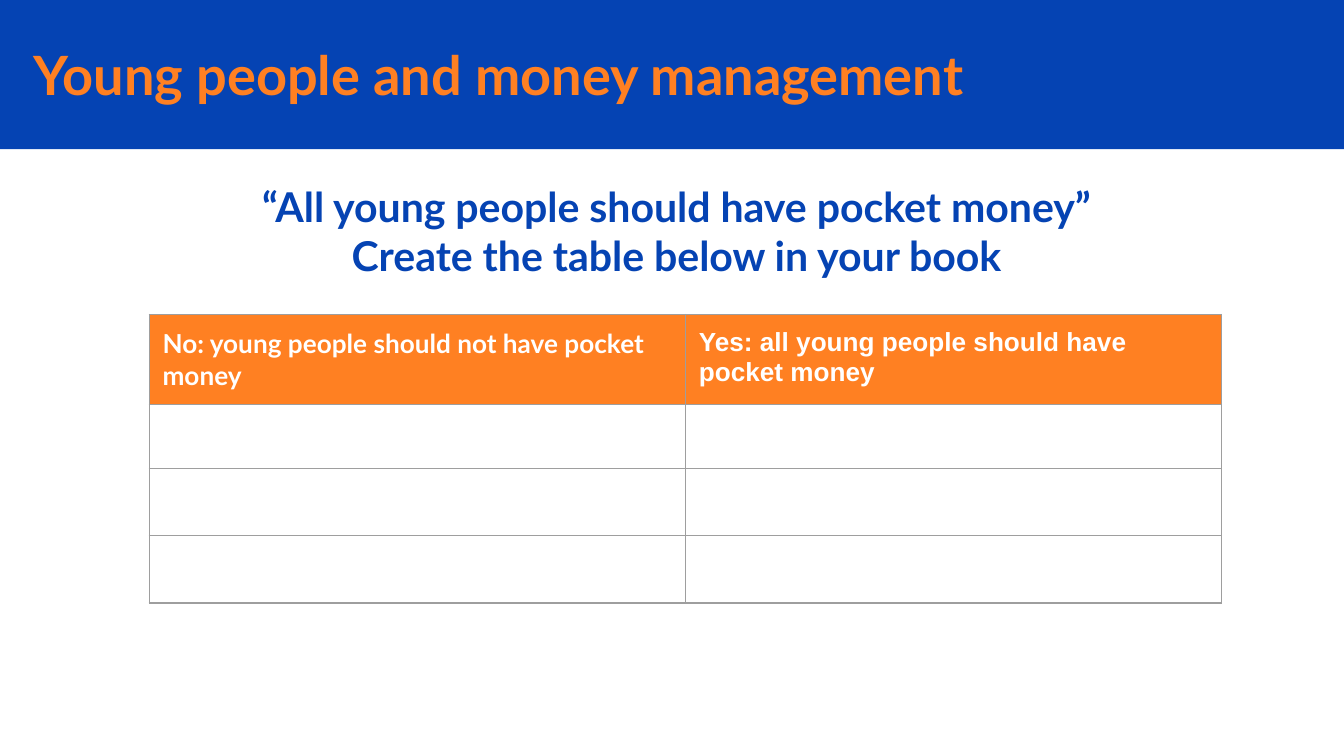
from dataclasses import dataclass

from lxml.etree import SubElement
from pptx import Presentation
from pptx.dml.color import RGBColor
from pptx.enum.shapes import MSO_SHAPE
from pptx.enum.text import MSO_ANCHOR, MSO_AUTO_SIZE, PP_ALIGN
from pptx.oxml.ns import qn
from pptx.util import Inches, Pt


@dataclass(frozen=True)
class Theme:
    blue: str = "0543B3"
    orange: str = "FF8022"
    white: str = "FFFFFF"
    grid: str = "9E9E9E"
    font: str = "Lato"
    alternate_font: str = "Arial"
    title_size: int = 29
    statement_size: int = 22
    header_size: int = 14
    grid_width: float = 0.75


THEME = Theme()
TITLE = "Young people and money management"
STATEMENT = [
    "“All young people should have pocket money”",
    "Create the table below in your book",
]
HEADERS = [
    ("No: young people should not have pocket money", THEME.font),
    ("Yes: all young people should have pocket money", THEME.alternate_font),
]
COLUMN_WIDTH = 3.99
ROW_HEIGHTS = [0.55, 0.48, 0.5, 0.5]


def style_paragraph(para, size, color, font=THEME.font, align=PP_ALIGN.LEFT):
    para.alignment = align
    para.font.name = font
    para.font.size = Pt(size)
    para.font.bold = True
    para.font.color.rgb = RGBColor.from_string(color)


def set_margins(target, side, vertical):
    target.margin_left = target.margin_right = Inches(side)
    target.margin_top = target.margin_bottom = Inches(vertical)


def add_band(page, width):
    band = page.shapes.add_shape(MSO_SHAPE.RECTANGLE, 0, 0, width, Inches(1.11))
    band.shadow.inherit = False
    band.fill.solid()
    band.fill.fore_color.rgb = RGBColor.from_string(THEME.blue)
    band.line.fill.background()
    # Send the band behind the title
    tree = band._element.getparent()
    tree.insert(2, band._element)


def fill_title(page):
    title = page.shapes.title
    title.left, title.top = Inches(0.15), Inches(0.27)
    title.width, title.height = Inches(8.85), Inches(0.56)
    frame = title.text_frame
    frame.text = TITLE
    frame.auto_size = MSO_AUTO_SIZE.NONE
    frame.vertical_anchor = MSO_ANCHOR.MIDDLE
    set_margins(frame, 0.1, 0.1)
    style_paragraph(frame.paragraphs[0], THEME.title_size, THEME.orange)


def add_statement(page):
    box = page.shapes.add_textbox(Inches(0.41), Inches(1.25), Inches(9.25), Inches(0.94))
    frame = box.text_frame
    frame.word_wrap = True
    set_margins(frame, 0.1, 0.1)
    frame.text = "\n".join(STATEMENT)
    for para in frame.paragraphs:
        style_paragraph(para, THEME.statement_size, THEME.blue, align=PP_ALIGN.CENTER)


def add_borders(cell):
    properties = cell._tc.get_or_add_tcPr()
    for position, side in enumerate(("lnL", "lnR", "lnT", "lnB")):
        line = SubElement(properties, qn(f"a:{side}"), w=str(Pt(THEME.grid_width)))
        fill = SubElement(line, qn("a:solidFill"))
        SubElement(fill, qn("a:srgbClr"), val=THEME.grid)
        # Borders come before the cell fill
        properties.insert(position, line)


def add_answer_table(page):
    columns = len(HEADERS)
    frame = page.shapes.add_table(
        len(ROW_HEIGHTS), columns, Inches(1.11), Inches(2.34),
        Inches(COLUMN_WIDTH * columns), Inches(sum(ROW_HEIGHTS)),
    )
    table = frame.table
    table.first_row = table.horz_banding = False
    for column in table.columns:
        column.width = Inches(COLUMN_WIDTH)
    for row, height in zip(table.rows, ROW_HEIGHTS):
        row.height = Inches(height)
    for cell in table.iter_cells():
        set_margins(cell, 0.1, 0.05)
        cell.fill.background()
        add_borders(cell)

    # Header row
    for cell, (text, font) in zip(table.rows[0].cells, HEADERS):
        set_margins(cell, 0.1, 0.1)
        cell.fill.solid()
        cell.fill.fore_color.rgb = RGBColor.from_string(THEME.orange)
        cell.text = text
        para = cell.text_frame.paragraphs[0]
        style_paragraph(para, THEME.header_size, THEME.white, font)


def main():
    deck = Presentation()
    # Widescreen, 16:9
    deck.slide_width = Inches(10)
    deck.slide_height = deck.slide_width * 9 // 16
    page = deck.slides.add_slide(deck.slide_layouts.get_by_name("Title Only"))
    add_band(page, deck.slide_width)
    fill_title(page)
    add_statement(page)
    add_answer_table(page)
    deck.save("out.pptx")


if __name__ == "__main__":
    main()
